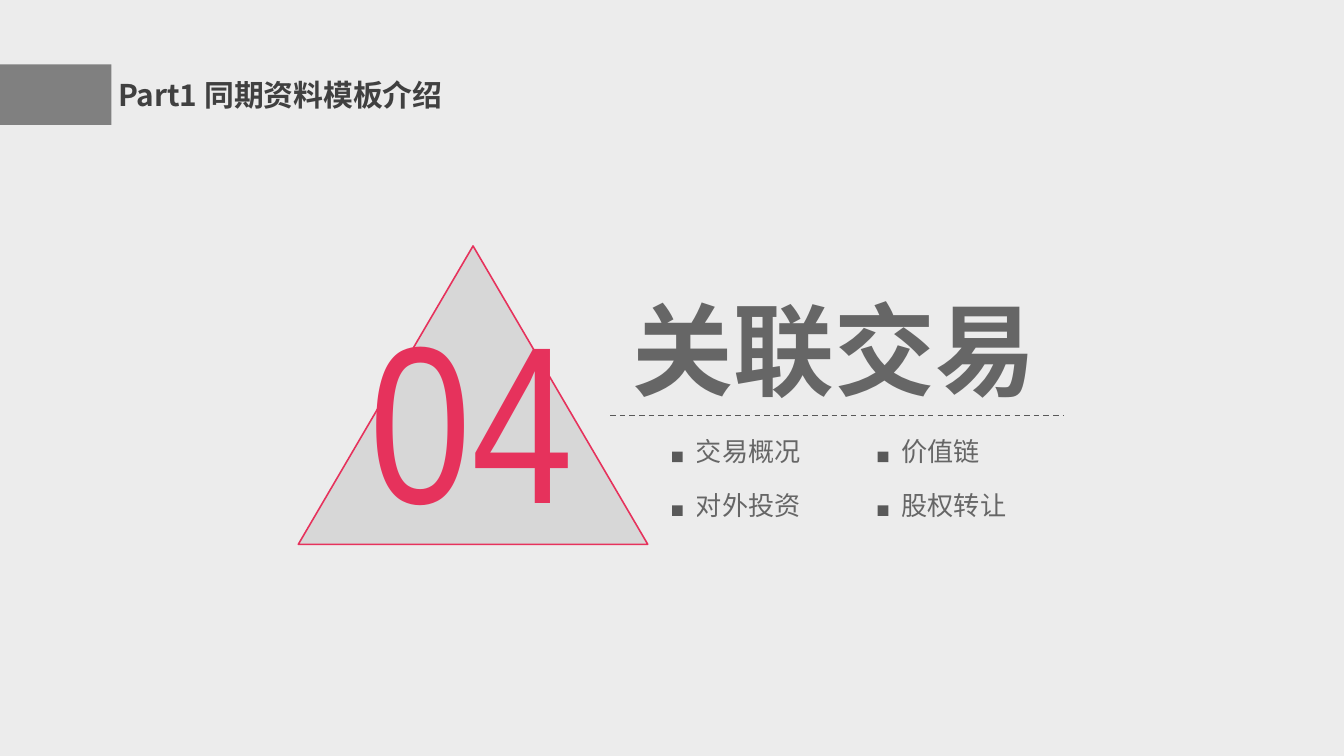
from pptx import Presentation
from pptx import util as u
from pptx.dml.color import RGBColor
from pptx.enum import dml, shapes, text
from pptx.oxml.ns import qn
from lxml import etree

SANS = "Noto Sans CJK SC"
GREY, ACCENT = "595959", "E6325C"
TOPICS = [["交易概况", "价值链"], ["对外投资", "股权转让"]]


def inches(*lengths):
    return [u.Inches(length) for length in lengths]


def paint(fill, colour, opacity=100):
    """Apply a solid fill, with opacity in percent."""
    fill.solid()
    fill.fore_color.rgb = RGBColor.from_string(colour)
    if opacity < 100:
        tone = fill._xPr.find(qn("a:solidFill"))[0]
        etree.SubElement(tone, qn("a:alpha")).set("val", str(opacity * 1000))


def add_span(para, words, size, colour, font=SANS, bold=False, opacity=100):
    span = para.add_run()
    span.text = words
    span.font.size = u.Pt(size)
    span.font.bold = bold
    paint(span.font.fill, colour, opacity)
    span.font.name = font
    etree.SubElement(span._r.rPr, qn("a:ea")).set("typeface", font)


def add_label(page, place, words, size, colour, **style):
    """Add a single line of text that does not wrap."""
    box = page.shapes.add_textbox(*inches(*place))
    box.text_frame.word_wrap = False
    box.text_frame.auto_size = text.MSO_AUTO_SIZE.SHAPE_TO_FIT_TEXT
    add_span(box.text_frame.paragraphs[0], words, size, colour, **style)


def add_plain_shape(page, kind, place, colour, opacity=100):
    shape = page.shapes.add_shape(kind, *inches(*place))
    shape.shadow.inherit = False
    paint(shape.fill, colour, opacity)
    shape.line.fill.background()
    return shape


def add_header(page, left, top, width, height):
    add_plain_shape(page, shapes.MSO_SHAPE.RECTANGLE, (left, top, 0.83, height), "808080")
    title = page.shapes.title
    title.left, title.top, title.width, title.height = inches(
        left + 0.78, top - 0.01, width - 0.78, height + 0.02)
    frame = title.text_frame
    frame.word_wrap = True
    frame.auto_size = text.MSO_AUTO_SIZE.NONE
    frame.vertical_anchor = text.MSO_ANCHOR.MIDDLE
    para = frame.paragraphs[0]
    para.alignment = text.PP_ALIGN.LEFT
    add_span(para, "Part1 同期资料模板介绍", 16, "404040", bold=True)


def add_number(page, left, top, width, height):
    triangle = add_plain_shape(page, shapes.MSO_SHAPE.ISOSCELES_TRIANGLE,
                               (left, top, width, height), GREY, 14)
    paint(triangle.line.fill, ACCENT)
    triangle.line.width = u.Pt(0.85)
    add_label(page, (left + 0.43, top + 0.2, 1.95, 2.12), "04", 120, ACCENT,
              font="Arial Narrow")


def add_section(page, left, top, width):
    """Add the section name, a dashed rule and the grid of topics."""
    add_label(page, (left + 0.07, top, 3.23, 1.01), "关联交易", 54, GREY,
              bold=True, opacity=91)
    rule_top = top + 1
    rule = page.shapes.add_connector(
        shapes.MSO_CONNECTOR.STRAIGHT, *inches(left, rule_top, left + width, rule_top))
    etree.SubElement(rule._element.spPr, qn("a:effectLst"))
    paint(rule.line.fill, GREY)
    rule.line.width = u.Pt(0.75)
    rule.line.dash_style = dml.MSO_LINE.DASH
    for row, topics in enumerate(TOPICS):
        for column, topic in enumerate(topics):
            x, y = left + 0.46 + 1.53 * column, rule_top + 0.1 + 0.4 * row
            add_plain_shape(page, shapes.MSO_SHAPE.RECTANGLE,
                            (x, y + 0.17, 0.08, 0.08), GREY)
            add_label(page, (x + 0.08, y, 0.2 + 0.2 * len(topic), 0.34), topic, 14, GREY,
                      opacity=91)


def main():
    deck = Presentation()
    deck.slide_width, deck.slide_height = inches(10, 10 * 9 / 16)
    page = deck.slides.add_slide(deck.slide_layouts.get_by_name("Title Only"))
    paint(page.background.fill, "ECECEC")
    add_header(page, 0, 0.48, 4.06, 0.45)
    add_number(page, 2.22, 1.83, 2.6, 2.22)
    add_section(page, 4.54, 2.09, 3.37)
    deck.save("out.pptx")


if __name__ == "__main__":
    main()
